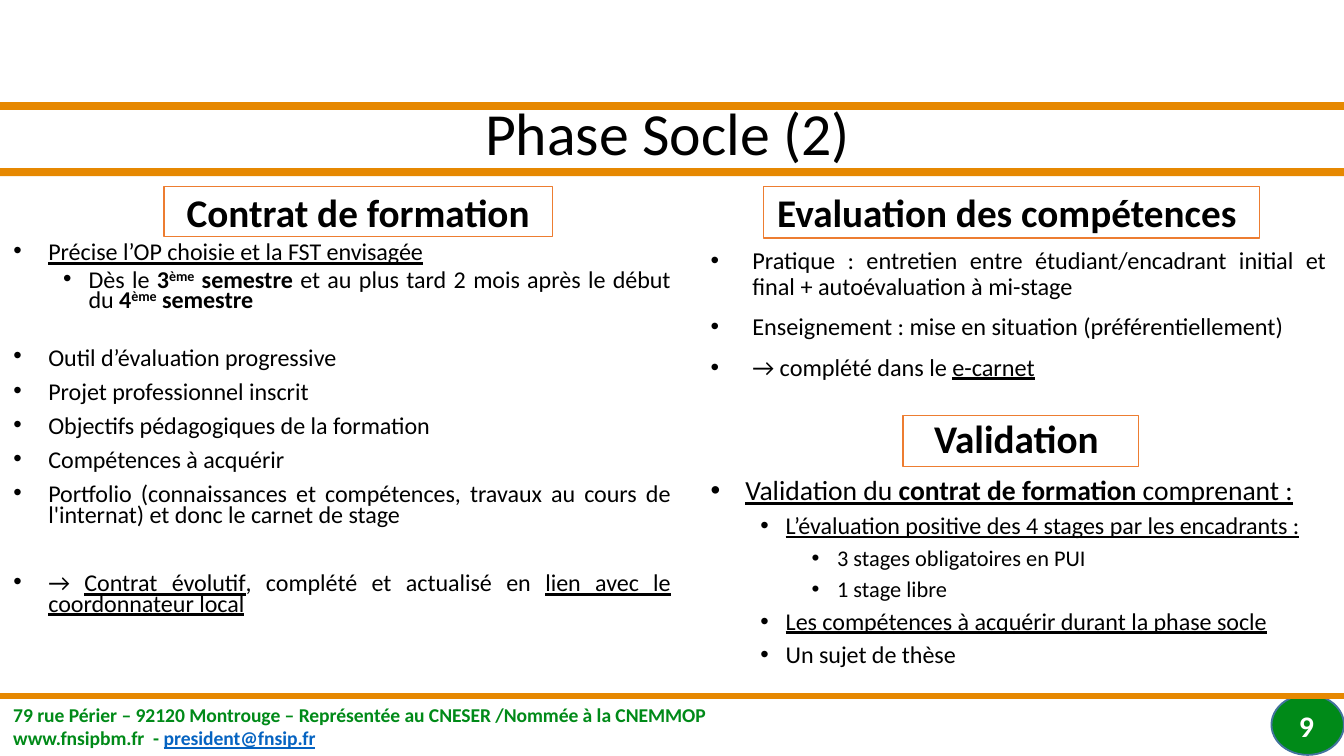
from lxml.etree import SubElement
from pptx import Presentation
from pptx.dml.color import RGBColor
from pptx.enum.shapes import MSO_CONNECTOR, MSO_SHAPE
from pptx.enum.text import MSO_ANCHOR, MSO_AUTO_SIZE, PP_ALIGN
from pptx.oxml.ns import qn
from pptx.util import Cm, Pt

COLORS = {
    "orange": "E68801", "green": "008A18", "badge_edge": "43739E",
    "heading_edge": "ED7D31", "link": "0563C1", "black": "000000", "white": "FFFFFF",
}
FONT = "Calibri"

# Left margin and hanging indent of each list level, in cm
INDENTS = [(0.66, 0.66), (1.42, 0.48), (2.39, 0.48)]
WIDE_INDENTS = [(0.79, 0.79)]

# Items are (level, size, space before, runs); a run is (text, marks),
# with b for bold, u for underlined and ^ for superscript.
CONTRACT = [
    (0, 12.9, 0, [("Précise l’OP choisie et la FST envisagée", "u")]),
    (1, 12.9, 3.8, [("Dès le ", ""), ("3", "b"), ("ème", "b^"), (" semestre", "b"),
                    (" et au plus tard 2 mois après le début du ", ""),
                    ("4", "b"), ("ème", "b^"), (" semestre", "b")]),
    (0, 12.9, 20, [("Outil d’évaluation progressive", "")]),
    (0, 12.9, 7.5, [("Projet professionnel inscrit", "")]),
    (0, 12.9, 7.5, [("Objectifs pédagogiques de la formation", "")]),
    (0, 12.9, 7.5, [("Compétences à acquérir", "")]),
    (0, 12.9, 7.5, [("Portfolio (connaissances et compétences, travaux au cours de "
                     "l'internat) et donc le carnet de stage", "")]),
    (0, 12.9, 26, [("→ ", ""), ("Contrat évolutif", "u"),
                   (", complété et actualisé en ", ""),
                   ("lien avec le coordonnateur local", "u")]),
]
EVALUATION = [
    (0, 13, 0, [("Pratique : entretien entre étudiant/encadrant initial et final "
                 "+ autoévaluation à mi-stage", "")]),
    (0, 13, 7.5, [("Enseignement : mise en situation (préférentiellement)", "")]),
    (0, 13, 7.5, [("→ complété dans le ", ""), ("e-carnet", "u")]),
]
VALIDATION = [
    (0, 14.8, 0, [("Validation du ", "u"), ("contrat de formation ", "bu"),
                  ("comprenant :", "u")]),
    (1, 12.9, 3.8, [("L’évaluation positive des 4 stages par les encadrants :", "u")]),
    (2, 12, 3.8, [("3 stages obligatoires en PUI", "")]),
    (2, 12, 3.8, [("1 stage libre", "")]),
    (1, 12.9, 3.8, [("Les compétences à acquérir durant la phase socle", "u")]),
    (1, 12.9, 3.8, [("Un sujet de thèse", "")]),
]


def rgb(name):
    return RGBColor.from_string(COLORS[name])


def place(shape, left, top, width, height):
    shape.left, shape.top = Cm(left), Cm(top)
    shape.width, shape.height = Cm(width), Cm(height)


def style(run, size, color="black", marks=""):
    font = run.font
    font.name, font.size = FONT, Pt(size)
    font.color.rgb = rgb(color)
    font.bold = "b" in marks
    font.underline = "u" in marks
    if "^" in marks:
        run._r.get_or_add_rPr().set("baseline", "30000")


def prepare_frame(frame, anchor=MSO_ANCHOR.TOP):
    frame.word_wrap = True
    frame.auto_size = MSO_AUTO_SIZE.NONE
    frame.vertical_anchor = anchor


def write_line(frame, text, size, marks="", color="black", spacing=1.0,
               anchor=MSO_ANCHOR.MIDDLE):
    """Fill a frame with one centred line."""
    frame.text = text
    prepare_frame(frame, anchor)
    line = frame.paragraphs[0]
    line.alignment = PP_ALIGN.CENTER
    line.line_spacing = spacing
    style(line.runs[0], size, color, marks)


def add_preset(slide, preset, box, fill=None, edge=None, edge_width=1):
    shape = slide.shapes.add_shape(preset, *map(Cm, box))
    shape.shadow.inherit = False
    if fill:
        shape.fill.solid()
        shape.fill.fore_color.rgb = rgb(fill)
    else:
        shape.fill.background()
    if edge:
        shape.line.color.rgb = rgb(edge)
        shape.line.width = Pt(edge_width)
    else:
        shape.line.fill.background()
    return shape


def add_heading(slide, text, box, anchor=MSO_ANCHOR.TOP):
    heading = add_preset(slide, MSO_SHAPE.RECTANGLE, box,
                         edge="heading_edge", edge_width=0.75)
    write_line(heading.text_frame, text, 21, "b", spacing=0.9, anchor=anchor)


def write_list(frame, items, spacing, indents=INDENTS):
    prepare_frame(frame)
    for index, (level, size, before, runs) in enumerate(items):
        item = frame.add_paragraph() if index else frame.paragraphs[0]
        margin, hanging = indents[level]
        properties = item._p.get_or_add_pPr()
        properties.set("marL", str(Cm(margin)))
        properties.set("indent", str(-Cm(hanging)))
        SubElement(properties, qn("a:buFont")).set("typeface", "Arial")
        SubElement(properties, qn("a:buChar")).set("char", "•")
        item.level = level
        item.alignment = PP_ALIGN.JUSTIFY
        item.line_spacing = spacing
        item.space_before = Pt(before)
        for text, marks in runs:
            run = item.add_run()
            run.text = text
            style(run, size, marks=marks)


def add_footer(slide):
    badge_box = (24.03, 13.13, 1.37, 1.14)
    add_preset(slide, MSO_SHAPE.OVAL, badge_box, "green", "badge_edge")
    address = add_preset(slide, MSO_SHAPE.RECTANGLE, (0, 13.16, 14, 1.14), "white")
    frame = address.text_frame
    prepare_frame(frame)
    frame.text = ("79 rue Périer – 92120 Montrouge – Représentée au CNESER "
                  "/Nommée à la CNEMMOP\nwww.fnsipbm.fr  - ")
    email = frame.paragraphs[1].add_run()
    email.text = "president@fnsip.fr"
    for line in frame.paragraphs:
        line.alignment = PP_ALIGN.LEFT
        for run in line.runs:
            style(run, 10.5, "green", "b")
    style(email, 10.5, "link", "bu")

    rule = slide.shapes.add_connector(
        MSO_CONNECTOR.STRAIGHT, Cm(-0.46), Cm(13.16), Cm(26.47), Cm(13.16))
    rule.line.color.rgb = rgb("orange")
    rule.line.width = Pt(3)
    SubElement(rule._element.spPr, qn("a:effectLst"))

    number = slide.shapes.add_textbox(Cm(24.03), Cm(13.28), Cm(1.32), Cm(0.86))
    write_line(number.text_frame, "9", 16, "b", "white")


def main():
    deck = Presentation()
    deck.slide_width, deck.slide_height = Cm(25.4), Cm(14.29)
    slide = deck.slides.add_slide(deck.slide_layouts[1])
    title, contract = slide.placeholders

    for top in (1.93, 3.18):
        add_preset(slide, MSO_SHAPE.RECTANGLE, (-2.64, top, 32.28, 0.15), "orange")
    place(title, -0.08, 2.08, 25.4, 0.99)
    write_line(title.text_frame, "Phase Socle (2)", 32, spacing=0.9)
    add_footer(slide)

    add_heading(slide, "Contrat de formation", (3.1, 3.53, 7.34, 0.94))
    place(contract, 0, 4.5, 12.93, 7.72)
    write_list(contract.text_frame, CONTRACT, 0.7)

    add_heading(slide, "Evaluation des compétences ", (14.43, 3.53, 9.37, 0.97))
    evaluation = slide.shapes.add_textbox(Cm(13.18), Cm(4.57), Cm(12.12), Cm(2.87))
    write_list(evaluation.text_frame, EVALUATION, 0.9, WIDE_INDENTS)

    add_heading(slide, "Validation ", (17.07, 7.85, 4.45, 0.97), MSO_ANCHOR.MIDDLE)
    validation = slide.shapes.add_textbox(Cm(13.18), Cm(8.89), Cm(12.12), Cm(4.19))
    write_list(validation.text_frame, VALIDATION, 0.9)

    deck.save("out.pptx")


if __name__ == "__main__":
    main()
